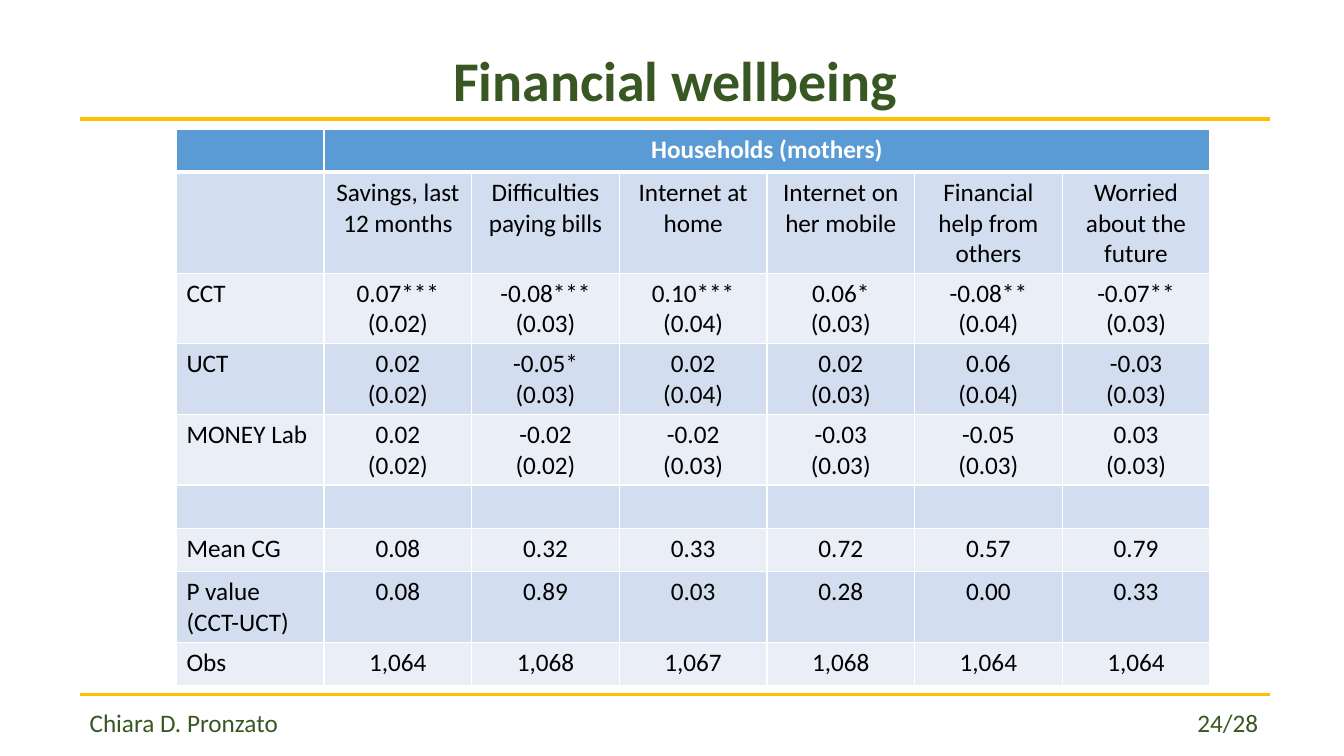
from lxml import etree
from pptx import Presentation
from pptx.dml.color import RGBColor
from pptx.enum.shapes import MSO_CONNECTOR
from pptx.enum.text import MSO_ANCHOR, PP_ALIGN
from pptx.oxml.ns import qn
from pptx.util import Inches, Pt

STRAIGHT = MSO_CONNECTOR.STRAIGHT
BOTTOM = MSO_ANCHOR.BOTTOM
LEFT, CENTER = PP_ALIGN.LEFT, PP_ALIGN.CENTER

COLORS = {
    "green": "385723",
    "gold": "FFC000",
    "header": "5B9BD5",
    "dark_band": "D2DEEF",
    "light_band": "EAEFF7",
    "white": "FFFFFF",
    "black": "000000",
}

MARGIN_LEFT, MARGIN_RIGHT = 0.79, 12.6
CONTENT_WIDTH = MARGIN_RIGHT - MARGIN_LEFT
TABLE_LEFT, TABLE_TOP, TABLE_WIDTH = 1.75, 1.28, 10.25
ROW_HEIGHTS = [0.43, 0.99, 0.7, 0.7, 0.7, 0.43, 0.43, 0.7, 0.43]

ROWS = [
    ["", "Households (mothers)", "", "", "", "", ""],
    ["", "Savings, last 12 months", "Difficulties paying bills", "Internet at home",
     "Internet on her mobile", "Financial help from others", "Worried about the future"],
    ["CCT", "0.07***\n(0.02)", "-0.08***\n(0.03)", "0.10***\n(0.04)",
     "0.06*\n(0.03)", "-0.08**\n(0.04)", "-0.07**\n(0.03)"],
    ["UCT", "0.02\n(0.02)", "-0.05*\n(0.03)", "0.02\n(0.04)",
     "0.02\n(0.03)", "0.06\n(0.04)", "-0.03\n(0.03)"],
    ["MONEY Lab", "0.02\n(0.02)", "-0.02\n(0.02)", "-0.02\n(0.03)",
     "-0.03\n(0.03)", "-0.05\n(0.03)", "0.03\n(0.03)"],
    [""] * 7,
    ["Mean CG", "0.08", "0.32", "0.33", "0.72", "0.57", "0.79"],
    ["P value\n(CCT-UCT)", "0.08", "0.89", "0.03", "0.28", "0.00", "0.33"],
    ["Obs", "1,064", "1,068", "1,067", "1,068", "1,064", "1,064"],
]


class SlideBuilder:
    font = "Calibri"

    def __init__(self, deck):
        self.slide = deck.slides.add_slide(deck.slide_layouts[5])

    def add_span(self, para, text, size, color, bold=False):
        span = para.add_run()
        span.text = text
        span.font.name = self.font
        span.font.size = Pt(size)
        span.font.bold = bold
        span.font.color.rgb = RGBColor.from_string(COLORS[color])

    def title(self, text):
        box = self.slide.shapes.title
        box.left, box.top = Inches(MARGIN_LEFT), Inches(0)
        box.width, box.height = Inches(CONTENT_WIDTH), Inches(1.25)
        frame = box.text_frame
        frame.word_wrap = True
        frame.vertical_anchor = BOTTOM
        frame.margin_bottom = Inches(0.12)
        para = frame.paragraphs[0]
        para.alignment = CENTER
        para.line_spacing = 0.9
        self.add_span(para, text, 40, "green", True)

    def rule(self, top):
        line = self.slide.shapes.add_connector(
            STRAIGHT, Inches(MARGIN_LEFT), Inches(top), Inches(MARGIN_RIGHT), Inches(top))
        line.line.color.rgb = RGBColor.from_string(COLORS["gold"])
        line.line.width = Pt(2.25)
        etree.SubElement(line._element.spPr, qn("a:effectLst"))

    def footer(self, author, page_number):
        box = self.slide.shapes.add_textbox(
            Inches(MARGIN_LEFT), Inches(6.97), Inches(CONTENT_WIDTH), Inches(0.5))
        box.text_frame.word_wrap = True
        para = box.text_frame.paragraphs[0]
        tabs = etree.SubElement(para._p.get_or_add_pPr(), qn("a:tabLst"))
        etree.SubElement(tabs, qn("a:tab"), pos=str(Inches(11.59)), algn="r")
        self.add_span(para, author, 18, "green")
        self.add_span(para, "\t" + page_number, 18, "green")

    def border(self, cell, side, width):
        line = etree.SubElement(
            cell._tc.get_or_add_tcPr(), qn("a:ln" + side), w=str(Pt(width)))
        fill = etree.SubElement(line, qn("a:solidFill"))
        etree.SubElement(fill, qn("a:srgbClr"), val=COLORS["white"])

    def cell(self, cell, text, row, column):
        for side in "LRTB":
            thick = (row, side) in ((0, "B"), (1, "T"))
            self.border(cell, side, 3 if thick else 1)
        band = "header" if row == 0 else "dark_band" if row % 2 else "light_band"
        cell.fill.solid()
        cell.fill.fore_color.rgb = RGBColor.from_string(COLORS[band])
        if not text:
            return
        frame = cell.text_frame
        for index, line in enumerate(text.split("\n")):
            para = frame.add_paragraph() if index else frame.paragraphs[0]
            para.alignment = CENTER if column else LEFT
            self.add_span(para, line, 18, "black" if row else "white", row == 0)

    def table(self, rows, heights):
        count = len(rows[0])
        table = self.slide.shapes.add_table(
            len(rows), count, Inches(TABLE_LEFT), Inches(TABLE_TOP),
            Inches(TABLE_WIDTH), Inches(sum(heights))).table
        for column in table.columns:
            column.width = Inches(TABLE_WIDTH / count)
        for row, (texts, height) in enumerate(zip(rows, heights)):
            table.rows[row].height = Inches(height)
            for column, text in enumerate(texts):
                self.cell(table.cell(row, column), text, row, column)
        table.cell(0, 1).merge(table.cell(0, count - 1))


def main():
    deck = Presentation()
    deck.slide_width, deck.slide_height = Inches(13.33), Inches(7.5)
    page = SlideBuilder(deck)
    page.title("Financial wellbeing")
    for top in (1.18, 6.89):
        page.rule(top)
    page.footer("Chiara D. Pronzato", "24/28")
    page.table(ROWS, ROW_HEIGHTS)
    deck.save("out.pptx")


if __name__ == "__main__":
    main()
